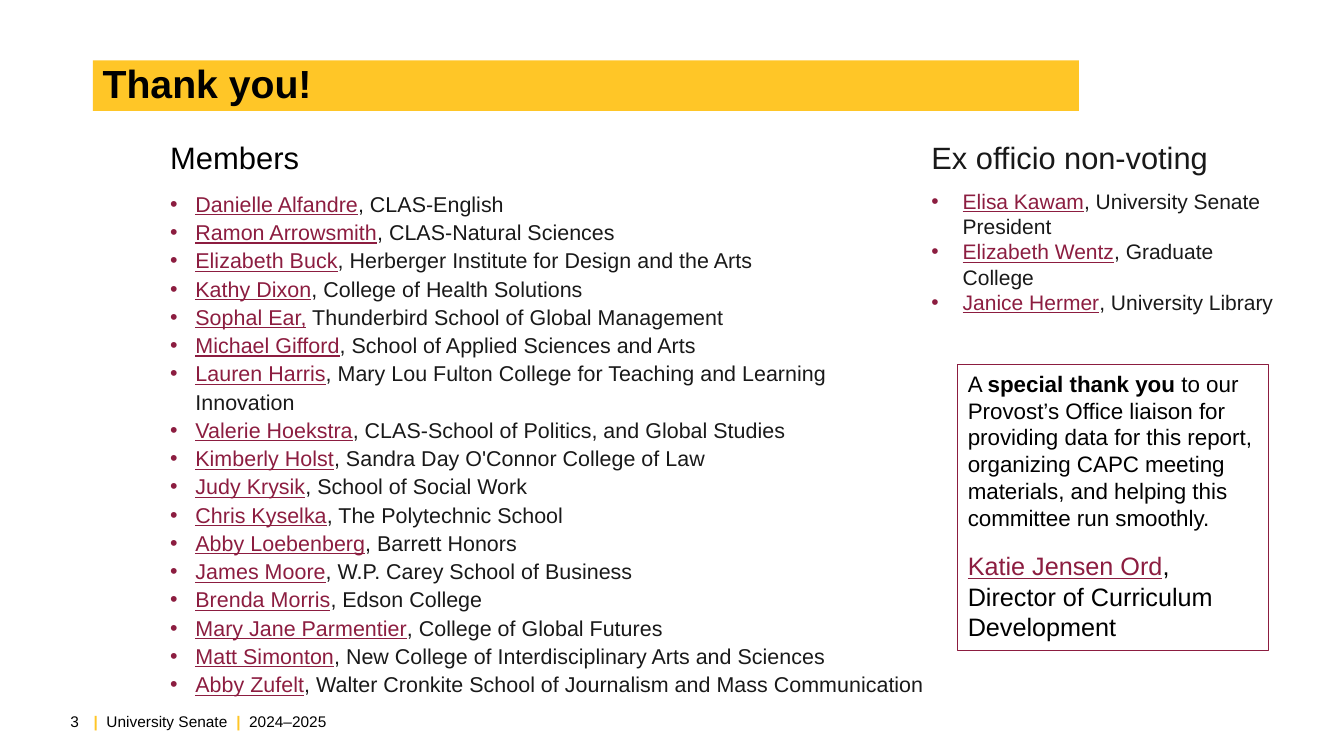
from lxml import etree
from pptx import Presentation
from pptx.dml.color import RGBColor
from pptx.enum.shapes import MSO_SHAPE as SHAPE
from pptx.enum.text import MSO_ANCHOR as ANCHOR, PP_ALIGN as ALIGN
from pptx.oxml.ns import qn
from pptx.util import Inches, Pt

GOLD = RGBColor(0xFF, 0xC6, 0x27)
MAROON = RGBColor(0x8C, 0x1D, 0x40)
BLACK = RGBColor(0, 0, 0)
CHARCOAL = RGBColor(0x19, 0x19, 0x19)
FONT = "Arial"

MEMBERS = [
    ("Danielle Alfandre", ", CLAS-English"),
    ("Ramon Arrowsmith", ", CLAS-Natural Sciences"),
    ("Elizabeth Buck", ", Herberger Institute for Design and the Arts"),
    ("Kathy Dixon", ", College of Health Solutions"),
    ("Sophal Ear,", " Thunderbird School of Global Management"),
    ("Michael Gifford", ", School of Applied Sciences and Arts"),
    ("Lauren Harris", ", Mary Lou Fulton College for Teaching and Learning Innovation"),
    ("Valerie Hoekstra", ", CLAS-School of Politics, and Global Studies"),
    ("Kimberly Holst", ", Sandra Day O'Connor College of Law"),
    ("Judy Krysik", ", School of Social Work"),
    ("Chris Kyselka", ", The Polytechnic School"),
    ("Abby Loebenberg", ", Barrett Honors"),
    ("James Moore", ", W.P. Carey School of Business"),
    ("Brenda Morris", ", Edson College"),
    ("Mary Jane Parmentier", ", College of Global Futures"),
    ("Matt Simonton", ", New College of Interdisciplinary Arts and Sciences"),
    ("Abby Zufelt", ", Walter Cronkite School of Journalism and Mass Communication"),
]
EX_OFFICIO = [
    ("Elisa Kawam", ", University Senate President"),
    ("Elizabeth Wentz", ", Graduate College"),
    ("Janice Hermer", ", University Library"),
]


def set_font(paragraph, size, color=None, bold=None):
    font = paragraph.font
    font.name, font.size, font.bold = FONT, Pt(size), bold
    if color is not None:
        font.color.rgb = color


def add_run(paragraph, text, color=None, bold=None, underline=None):
    run = paragraph.add_run()
    run.text = text
    run.font.bold, run.font.underline = bold, underline
    if color is not None:
        run.font.color.rgb = color


def add_person(paragraph, name, role, color):
    """Write an underlined maroon name followed by a plain role."""
    add_run(paragraph, name, MAROON, underline=True)
    add_run(paragraph, role, color)


def add_bullet(paragraph, indent):
    properties = paragraph._p.get_or_add_pPr()
    properties.set("marL", str(Inches(indent)))
    properties.set("indent", str(-Inches(indent)))
    bullet_color = etree.SubElement(properties, qn("a:buClr"))
    etree.SubElement(bullet_color, qn("a:srgbClr"), val=str(MAROON))
    etree.SubElement(properties, qn("a:buFont"), typeface=FONT)
    etree.SubElement(properties, qn("a:buChar"), char="•")


def text_frame(slide, box, anchor=ANCHOR.TOP):
    frame = slide.shapes.add_textbox(*map(Inches, box)).text_frame
    frame.word_wrap = True
    frame.vertical_anchor = anchor
    return frame


def add_rectangle(slide, box):
    rectangle = slide.shapes.add_shape(SHAPE.RECTANGLE, *map(Inches, box))
    rectangle.shadow.inherit = False
    rectangle.text_frame.word_wrap = True
    return rectangle


def add_title(slide, box, text):
    banner = add_rectangle(slide, box)
    banner.fill.solid()
    banner.fill.fore_color.rgb = GOLD
    banner.line.fill.background()
    banner.text_frame.vertical_anchor = ANCHOR.MIDDLE
    title = banner.text_frame.paragraphs[0]
    title.alignment = ALIGN.LEFT
    title.line_spacing = Pt(30)
    set_font(title, 28, BLACK, bold=True)
    add_run(title, text)


def add_roster(slide, box, heading, people, heading_size, size, indent,
               spacing=1.0, heading_color=CHARCOAL):
    """Write a heading above a bulleted list of people and their units."""
    frame = text_frame(slide, box)
    header = frame.paragraphs[0]
    header.line_spacing = spacing
    header.space_after = Pt(9)
    set_font(header, heading_size, heading_color)
    add_run(header, heading)
    for name, unit in people:
        entry = frame.add_paragraph()
        add_bullet(entry, indent)
        entry.line_spacing = spacing
        set_font(entry, size)
        add_person(entry, name, unit, CHARCOAL)


def add_thanks(slide, box):
    panel = add_rectangle(slide, box)
    panel.fill.background()
    panel.line.color.rgb = MAROON
    panel.line.width = Pt(0.75)
    frame = panel.text_frame
    frame.vertical_anchor = ANCHOR.TOP

    message = frame.paragraphs[0]
    set_font(message, 16, BLACK)
    add_run(message, "A ")
    add_run(message, "special thank you ", bold=True)
    add_run(message, "to our Provost’s Office liaison for providing data for this "
                     "report, organizing CAPC meeting materials, and helping this "
                     "committee run smoothly.")

    liaison = frame.add_paragraph()
    liaison.space_before = Pt(14)
    set_font(liaison, 18)
    add_person(liaison, "Katie Jensen Ord", ",", BLACK)

    position = frame.add_paragraph()
    set_font(position, 18, BLACK)
    add_run(position, "Director of Curriculum Development")

    for paragraph in frame.paragraphs:
        paragraph.alignment = ALIGN.LEFT


def add_footer(slide, box, number):
    left, top, width, height = box
    number_width = 0.49
    page = text_frame(slide, (left, top, number_width, height), ANCHOR.MIDDLE).paragraphs[0]
    page.alignment = ALIGN.RIGHT
    set_font(page, 11, BLACK)
    add_run(page, number)

    label_left = left + number_width - 0.05
    label_box = (label_left, top, left + width - label_left, height)
    label = text_frame(slide, label_box, ANCHOR.MIDDLE).paragraphs[0]
    set_font(label, 11)
    for text in ("  University Senate  ", "  2024–2025"):
        add_run(label, "|", GOLD, bold=True)
        add_run(label, text, BLACK)


def build_thank_you(slide):
    add_title(slide, (0.92, 0.6, 9.78, 0.5), "Thank you!")
    add_roster(slide, (1.59, 1.29, 7.73, 5.87), "Members", MEMBERS,
               22.1, 15.3, 0.25, spacing=1.1, heading_color=BLACK)
    add_roster(slide, (9.14, 1.33, 3.62, 1.86), "Ex officio non-voting", EX_OFFICIO,
               22, 15, 0.31)
    add_thanks(slide, (9.5, 3.62, 3.08, 2.83))
    add_footer(slide, (0.39, 6.96, 5.53, 0.4), "3")


def main():
    deck = Presentation()
    deck.slide_width, deck.slide_height = Inches(13.33), Inches(7.5)
    build_thank_you(deck.slides.add_slide(deck.slide_layouts[6]))
    deck.save("out.pptx")


if __name__ == "__main__":
    main()
